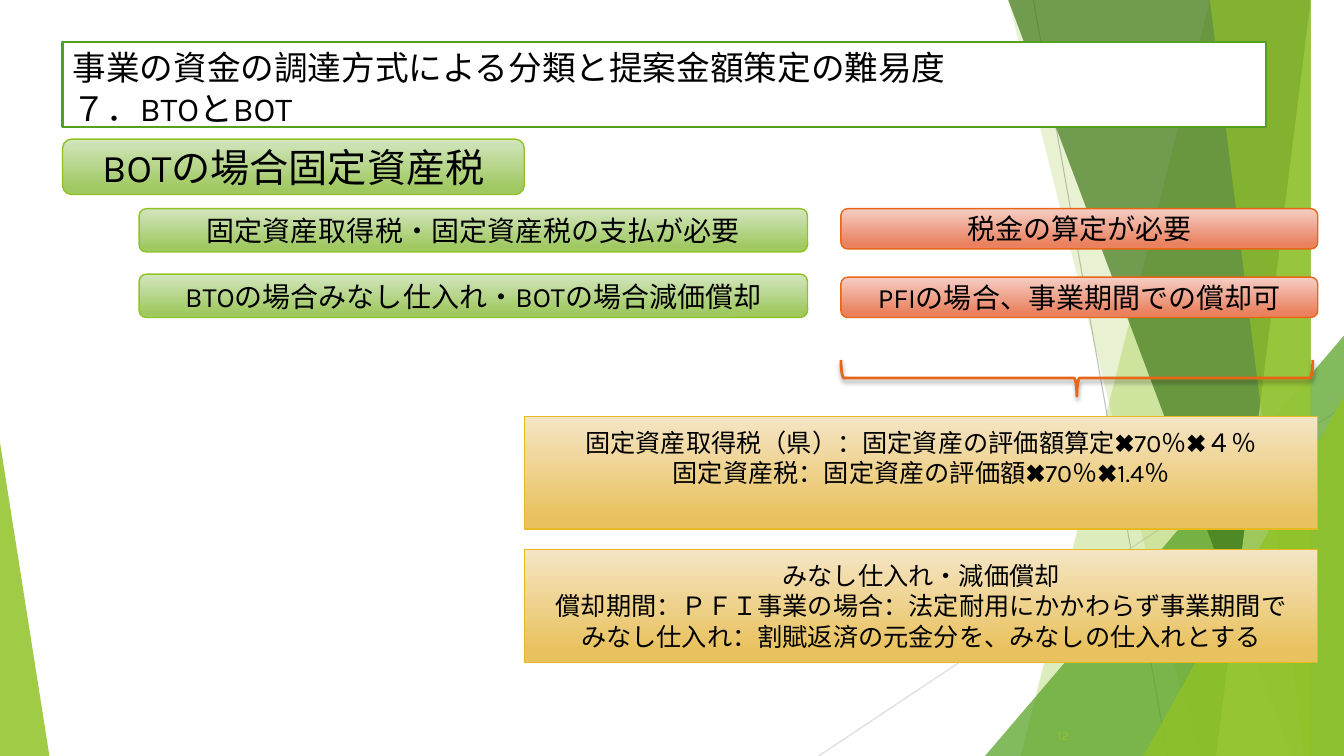
from lxml.etree import SubElement
from pptx import Presentation
from pptx.dml.color import RGBColor
from pptx.enum.dml import MSO_FILL
from pptx.enum.shapes import MSO_CONNECTOR as Link, MSO_SHAPE as Preset
from pptx.enum.text import MSO_ANCHOR as Anchor, MSO_AUTO_SIZE as Fit, PP_ALIGN as Align
from pptx.oxml.ns import qn
from pptx.util import Emu, Inches, Pt

HEADING = "事業の資金の調達方式による分類と提案金額策定の難易度\v７．BTOとBOT"
TOPIC = "BOTの場合固定資産税"
REQUIREMENTS = [
    ("固定資産取得税・固定資産税の支払が必要", "税金の算定が必要"),
    ("BTOの場合みなし仕入れ・BOTの場合減価償却", "PFIの場合、事業期間での償却可"),
]
DETAILS = [
    (["固定資産取得税（県）：固定資産の評価額算定✖70％✖４％",
      "固定資産税：固定資産の評価額✖70％✖1.4％"], 0.35),
    (["みなし仕入れ・減価償却",
      "償却期間：ＰＦＩ事業の場合：法定耐用にかかわらず事業期間で",
      "みなし仕入れ：割賦返済の元金分を、みなしの仕入れとする"], 0.05),
]
PAGE = "12"

THEME = {
    "font": "Karla", "ink": "000000", "paper": "FFFFFF", "edge": "54A021", "page": "90C226",
    "green": ("D3E5BE", "A0C962", "90C226"),
    "red": ("F5CEC5", "EA815F", "E76618"),
    "gold": ("F5E5C5", "E9C260", "E6B91E"),
    "title": 24, "topic": 28, "point": 20, "detail": 18, "number": 9,
}
WIDTH, HEIGHT = 13.33, 7.5
LEFT, INDENT, MIDDLE, SIDE, RIGHT = 0.62, 1.38, 5.2, 8.34, 13.07
ROUND, BOX = Preset.ROUNDED_RECTANGLE, Preset.RECTANGLE

RAYS = [((10.25, 0), (11.58, HEIGHT), "BFBFBF"), ((WIDTH, 4.03), (8.12, HEIGHT), "D9D9D9")]
FACETS = [
    ("band", 12.28, 10.04, "90C226", 30),
    ("band", 10.5, 11.83, "90C226", 20),
    ("peak", (9.77, 3.33, 3.56, 4.17), 1, "54A021", 72),
    ("band", 10.21, 12.91, "3F7819", 70),
    ("band", 13.03, 11.92, "C0E474", 70),
    ("band", 11.96, 13.18, "90C226", 65),
    ("peak", (11.34, 3.93, 1.99, 3.57), 1, "90C226", 80),
    ("peak", (0, 4.39, 0.49, 3.11), 0, "90C226", 85),
]


def rgb(code):
    return RGBColor.from_string(code)


def assign(target, values):
    for key, value in values.items():
        setattr(target, key, value)


def outline(shape, color, width):
    shape.line.color.rgb = rgb(color)
    shape.line.width = Pt(width)


def write(shape, lines, size, color=THEME["ink"], align=Align.CENTER, **frame_format):
    frame = shape.text_frame
    frame.text = "\n".join(lines)
    assign(frame, {"word_wrap": True, "auto_size": Fit.NONE,
                   "vertical_anchor": Anchor.MIDDLE, **frame_format})
    for paragraph in frame.paragraphs:
        paragraph.alignment = align
        for run in paragraph.runs:
            assign(run.font, {"name": THEME["font"], "size": Pt(THEME[size])})
            run.font.color.rgb = rgb(color)
            SubElement(run.font._element, qn("a:ea"), typeface=THEME["font"])


def add_preset(slide, preset, area):
    shape = slide.shapes.add_shape(preset, *map(Inches, area))
    shape.shadow.inherit = False
    return shape


def add_ray(slide, start, end, color):
    ray = slide.shapes.add_connector(Link.STRAIGHT, *map(Inches, start + end))
    outline(ray, color, 0.75)
    SubElement(ray._element.spPr, qn("a:effectLst"))


def add_facet(slide, kind, place, tip, color, opacity):
    if kind == "band":
        builder = slide.shapes.build_freeform(place, 0, scale=Inches(1))
        builder.add_line_segments([(WIDTH, 0), (WIDTH, HEIGHT), (tip, HEIGHT)], close=True)
        facet = builder.convert_to_shape()
        facet.shadow.inherit = False
    else:
        facet = add_preset(slide, Preset.ISOSCELES_TRIANGLE, place)
        facet.adjustments[0] = tip
    facet.fill.solid()
    facet.fill.fore_color.rgb = rgb(color)
    facet.line.fill.background()
    for tint in facet._element.spPr.find(qn("a:solidFill")):
        SubElement(tint, qn("a:alpha"), val=str(opacity * 1000))


def add_panel(slide, preset, area, palette, lines, size, **frame_format):
    panel = add_preset(slide, preset, area)
    light, deep, edge = THEME[palette]
    panel.fill.gradient()
    panel.fill.gradient_angle = 270
    for stop, color, position in zip(panel.fill.gradient_stops, (light, deep), (0, 0.88)):
        stop.color.rgb = rgb(color)
        stop.position = position
    outline(panel, edge, 1)
    write(panel, lines, size, **frame_format)


def add_brace(slide):
    brace = add_preset(slide, Preset.RIGHT_BRACE, (10.5, 1.41, 0.36, 4.68))
    brace.rotation = 90
    brace.fill.background()
    outline(brace, THEME["red"][2], 2)
    shadow = SubElement(brace._element.spPr.find(qn("a:effectLst")), qn("a:outerShdw"),
                        blurRad=str(Pt(3)), dist=str(Pt(2)), dir="5400000", rotWithShape="0")
    tint = SubElement(shadow, qn("a:srgbClr"), val=THEME["ink"])
    SubElement(tint, qn("a:alpha"), val="35000")


def add_heading(slide):
    title = slide.shapes.title
    slide.shapes._spTree.append(title._element)
    assign(title, {"left": Inches(LEFT), "top": Inches(0.42),
                   "width": Inches(11.94), "height": Inches(0.84)})
    title.fill.solid()
    title.fill.fore_color.rgb = rgb(THEME["paper"])
    outline(title, THEME["edge"], 1.5)
    write(title, [HEADING], "title", align=Align.LEFT, vertical_anchor=Anchor.TOP)


def main():
    deck = Presentation()
    assign(deck, {"slide_width": Inches(WIDTH), "slide_height": Inches(HEIGHT)})
    slide = deck.slides.add_slide(deck.slide_layouts[5])
    for ray in RAYS:
        add_ray(slide, *ray)
    for facet in FACETS:
        add_facet(slide, *facet)
    add_heading(slide)
    add_panel(slide, ROUND, (LEFT, 1.38, MIDDLE - LEFT, 0.55), "green", [TOPIC], "topic")
    for row, (need, result) in enumerate(REQUIREMENTS):
        add_panel(slide, ROUND, (INDENT, 2.07 + 0.65 * row, 6.63, 0.43),
                  "green", [need], "point")
        add_panel(slide, ROUND, (SIDE, 2.07 + 0.68 * row, RIGHT - SIDE, 0.4),
                  "red", [result], "point")
    add_brace(slide)
    for row, (lines, bottom) in enumerate(DETAILS):
        add_panel(slide, BOX, (MIDDLE, 4.13 + 1.32 * row, RIGHT - MIDDLE, 1.12),
                  "gold", lines, "detail", margin_bottom=Inches(bottom))
    number = slide.shapes.add_textbox(*map(Inches, (10.02, 7.1, 0.68, 0.4)))
    write(number, [PAGE], "number", THEME["page"], Align.RIGHT)
    deck.save("out.pptx")


if __name__ == "__main__":
    main()
